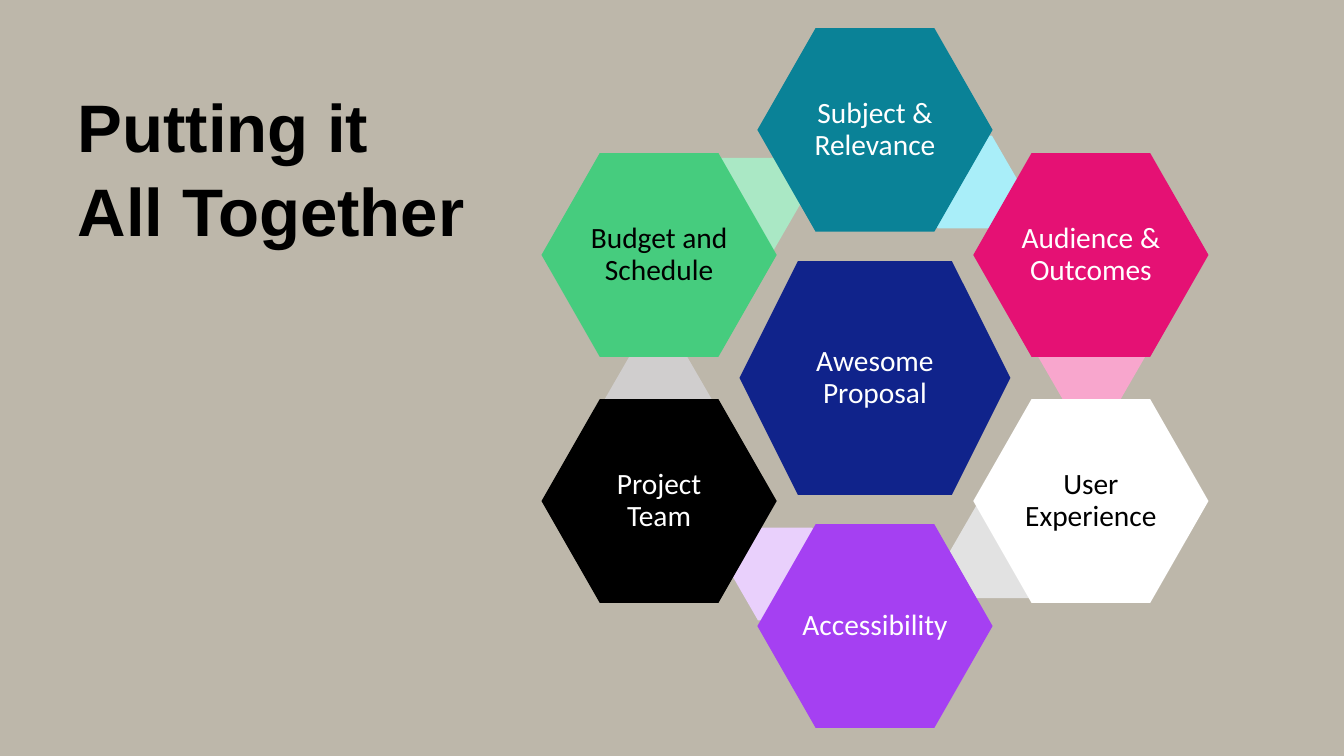
from dataclasses import dataclass

from pptx import Presentation
from pptx.dml.color import RGBColor
from pptx.enum.shapes import MSO_SHAPE as Shape
from pptx.enum.text import MSO_ANCHOR as Anchor, MSO_AUTO_SIZE as AutoSize, PP_ALIGN as Align
from pptx.util import Pt

TITLE = "Putting it\vAll Together"
HUB = "Awesome Proposal"
# Clockwise from the top: label, fill, text colour, link fill
STEPS = [
    ("Subject & Relevance", "0A8297", "FFFFFF", "A9EEF9"),
    ("Audience & Outcomes", "E51174", "FFFFFF", "F8A6CD"),
    ("User Experience", "FFFFFF", "000000", "E2E2E2"),
    ("Accessibility", "A540F2", "FFFFFF", "E9D0FC"),
    ("Project Team", "000000", "FFFFFF", "D0CECE"),
    ("Budget and Schedule", "46CC7E", "000000", "AAE8C5"),
]


@dataclass(frozen=True)
class Theme:
    background: str = "BDB7AA"
    title: str = "000000"
    hub: str = "10238B"
    hub_text: str = "FFFFFF"
    title_font: str = "Arial"
    label_font: str = "Calibri"
    title_size: int = 48
    label_size: int = 21


THEME = Theme()

CENTER = (625, 270)
HUB_SIZE, STEP_SIZE, LINK_SIZE = (193.5, 167), (168, 145.5), (77, 66.2)
HUB_CUT, STEP_CUT, LINK_CUT = 0.25, 0.286, 0.289


def around(half_ring):
    """Complete a ring of offsets by mirroring its first half through the center."""
    return half_ring + [(-x, -y) for x, y in half_ring]


STEP_OFFSETS = around([(0, -177.2), (154.2, -87.9), (154.2, 87.9)])
LINK_OFFSETS = around([(64.2, -140), (154.8, -15.6), (91.8, 124.2)])


def write(frame, text, *, font, size, color, bold=False, align=Align.CENTER,
          anchor=Anchor.MIDDLE, line_spacing=0.9, insets=(2, 2, 2, 2)):
    frame.word_wrap = True
    frame.auto_size = AutoSize.NONE
    frame.vertical_anchor = anchor
    (frame.margin_left, frame.margin_top,
     frame.margin_right, frame.margin_bottom) = map(Pt, insets)
    paragraph = frame.paragraphs[0]
    paragraph.text = text
    paragraph.alignment = align
    paragraph.line_spacing = line_spacing
    for run in paragraph.runs:
        run.font.name = font
        run.font.size = Pt(size)
        run.font.bold = bold
        run.font.color.rgb = RGBColor.from_string(color)


def add_hexagon(slide, offset, size, cut, fill):
    """Add a borderless hexagon centered at an offset from the ring's center."""
    left, top = (c + o - s / 2 for c, o, s in zip(CENTER, offset, size))
    hexagon = slide.shapes.add_shape(Shape.HEXAGON, Pt(left), Pt(top), *map(Pt, size))
    hexagon.adjustments[0] = cut
    hexagon.shadow.inherit = False
    hexagon.fill.solid()
    hexagon.fill.fore_color.rgb = RGBColor.from_string(fill)
    hexagon.line.fill.background()
    return hexagon


def add_labelled_hexagon(slide, label, color, *geometry):
    hexagon = add_hexagon(slide, *geometry)
    write(hexagon.text_frame, label, font=THEME.label_font,
          size=THEME.label_size, color=color)


def main():
    deck = Presentation()
    deck.slide_width, deck.slide_height = Pt(960), Pt(540)
    slide = deck.slides.add_slide(deck.slide_layouts[5])
    slide.background.fill.solid()
    slide.background.fill.fore_color.rgb = RGBColor.from_string(THEME.background)

    title = slide.shapes.title
    title.left, title.top, title.width, title.height = map(Pt, (55.5, 58.5, 315.5, 157))
    write(title.text_frame, TITLE, font=THEME.title_font, size=THEME.title_size,
          color=THEME.title, bold=True, align=Align.LEFT, anchor=Anchor.TOP,
          line_spacing=Pt(60), insets=(0, 0, 0, 20))

    for (*_, link_fill), offset in zip(STEPS, LINK_OFFSETS):
        add_hexagon(slide, offset, LINK_SIZE, LINK_CUT, link_fill)
    add_labelled_hexagon(slide, HUB, THEME.hub_text, (0, 0), HUB_SIZE, HUB_CUT, THEME.hub)
    for (label, fill, color, _), offset in zip(STEPS, STEP_OFFSETS):
        add_labelled_hexagon(slide, label, color, offset, STEP_SIZE, STEP_CUT, fill)

    deck.save("out.pptx")


if __name__ == "__main__":
    main()
